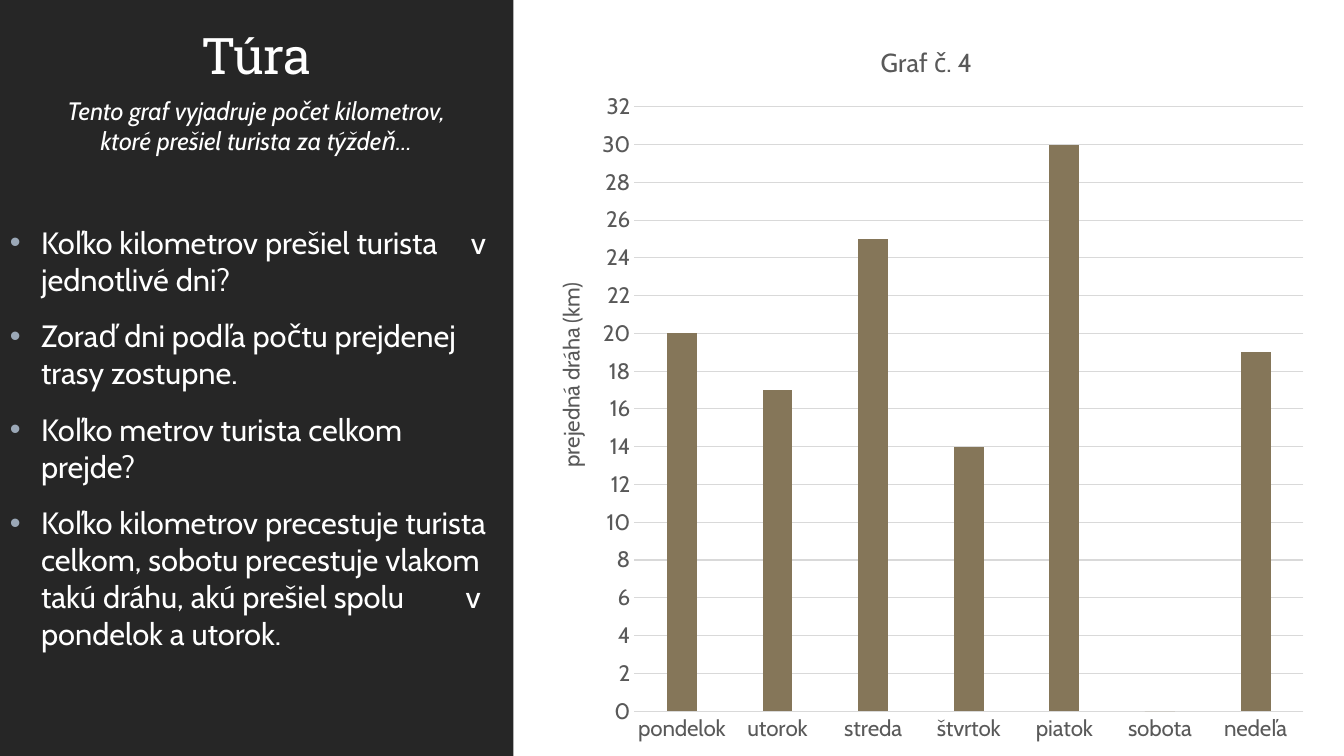
from lxml.etree import SubElement
from pptx import Presentation
from pptx.chart.data import CategoryChartData
from pptx.dml.color import RGBColor
from pptx.enum.chart import XL_CHART_TYPE, XL_TICK_MARK
from pptx.enum.shapes import MSO_SHAPE
from pptx.enum.text import MSO_ANCHOR, MSO_AUTO_SIZE, PP_ALIGN
from pptx.oxml import parse_xml
from pptx.oxml.ns import nsdecls, qn
from pptx.util import Emu, Inches, Pt

COLORS = {"panel": "262626", "white": "FFFFFF", "bullet": "9BA8B7",
          "bar": "857659", "label": "595959", "line": "D9D9D9"}
BODY_FONT, TITLE_FONT = "Cabin", "Roboto Slab"

KILOMETRES = {"pondelok": 20, "utorok": 17, "streda": 25, "štvrtok": 14,
              "piatok": 30, "sobota": 0, "nedeľa": 19}
# Each question with the tab stop, in inches, of its stand-alone "v".
QUESTIONS = [
    ("Koľko kilometrov prešiel turista\tv jednotlivé dni?", 4.7),
    ("Zoraď dni podľa počtu prejdenej trasy zostupne.", None),
    ("Koľko metrov turista celkom prejde?", None),
    ("Koľko kilometrov precestuje turista celkom, sobotu precestuje vlakom "
     "takú dráhu, akú prešiel spolu\tv pondelok a utorok.", 4.52),
]


def color(name):
    return RGBColor.from_string(COLORS[name])


def style_font(font, size, color_name, name=BODY_FONT):
    font.size, font.name, font.bold = Pt(size), name, False
    font.color.rgb = color(color_name)


def place(element, **shares):
    """Put a chart element at fixed shares of the chart's size."""
    for old in element.findall(qn("c:layout")):
        element.remove(old)
    target = '<c:layoutTarget val="inner"/>' if "w" in shares else ""
    modes = "".join(f'<c:{key}Mode val="edge"/>' for key in "xy")
    values = "".join(f'<c:{key} val="{value}"/>' for key, value in shares.items())
    layout = parse_xml(f'<c:layout {nsdecls("c")}><c:manualLayout>{target}{modes}'
                       f'{values}</c:manualLayout></c:layout>')
    text = element.find(qn("c:tx"))
    element.insert(0 if text is None else 1, layout)


class SlideBuilder:
    """Draws elements on one slide, placed by shares of its size."""

    def __init__(self, deck):
        self.deck = deck
        self.page = deck.slides.add_slide(deck.slide_layouts[6])

    def area(self, left, top, width, height):
        across, down = self.deck.slide_width, self.deck.slide_height
        return [Emu(round(share * size)) for share, size in
                zip((left, top, width, height), (across, down, across, down))]

    def panel(self, *shares):
        panel = self.page.shapes.add_shape(MSO_SHAPE.RECTANGLE, *self.area(*shares))
        panel.shadow.inherit = False
        panel.fill.solid()
        panel.fill.fore_color.rgb = color("panel")
        panel.line.fill.background()

    def text(self, shares, lines, size, font=BODY_FONT, align=PP_ALIGN.LEFT,
             anchor=MSO_ANCHOR.TOP):
        frame = self.page.shapes.add_textbox(*self.area(*shares)).text_frame
        frame.word_wrap = True
        frame.vertical_anchor = anchor
        for index, line in enumerate(lines):
            para = frame.paragraphs[0] if index == 0 else frame.add_paragraph()
            para.text = line
            para.alignment = align
            style_font(para.font, size, "white", font)
        return frame

    def bullets(self, shares, items, size):
        frame = self.text(shares, [line for line, _ in items], size)
        for para, (_, stop) in zip(frame.paragraphs, items):
            para.space_before, para.space_after = Pt(12), Pt(2)
            settings = para._p.get_or_add_pPr()
            settings.set("marL", str(Inches(0.31)))
            settings.set("indent", str(-Inches(0.31)))
            marks = [parse_xml(f'<a:buClr {nsdecls("a")}>'
                               f'<a:srgbClr val="{COLORS["bullet"]}"/></a:buClr>'),
                     parse_xml(f'<a:buFont {nsdecls("a")} typeface="Arial"/>'),
                     parse_xml(f'<a:buChar {nsdecls("a")} char="•"/>')]
            if stop:
                tabs = parse_xml(f'<a:tabLst {nsdecls("a")}/>')
                SubElement(tabs, qn("a:tab"), pos=str(Inches(stop)), algn="l")
                marks.append(tabs)
            defaults = settings.find(qn("a:defRPr"))
            for mark in marks:
                defaults.addprevious(mark)

    def chart_title(self, owner, title, size, **shares):
        frame = owner.text_frame
        frame.text = title
        style_font(frame.paragraphs[0].font, size, "label")
        place(owner._element, **shares)

    def column_chart(self, shares, values, title, axis_title):
        data = CategoryChartData()
        data.categories = list(values)
        data.add_series("Series 1", list(values.values()))
        chart = self.page.shapes.add_chart(
            XL_CHART_TYPE.COLUMN_CLUSTERED, *self.area(*shares), data).chart
        chart.has_legend = False
        style_font(chart.font, 16, "label")
        chart.has_title = True
        self.chart_title(chart.chart_title, title, 18.6, x=0.44, y=0.04)

        days, distance = chart.category_axis, chart.value_axis
        for axis in (days, distance):
            axis.major_tick_mark = axis.minor_tick_mark = XL_TICK_MARK.NONE
            style_font(axis.tick_labels.font, 16, "label")
        distance.minimum_scale, distance.maximum_scale = 0, 32
        distance.major_unit = 2
        distance.format.line.fill.background()
        for line in (days.format.line, distance.major_gridlines.format.line):
            line.color.rgb = color("line")
            line.width = Pt(0.75)
        distance.has_title = True
        self.chart_title(distance.axis_title, axis_title, 16, x=0.03, y=0.36)
        direction = distance.axis_title.text_frame._txBody.find(qn("a:bodyPr"))
        direction.set("rot", "-5400000")
        direction.set("vert", "horz")

        plot = chart.plots[0]
        plot.gap_width, plot.overlap = 219, -27
        plot.vary_by_categories = False
        bars = plot.series[0].format.fill
        bars.solid()
        bars.fore_color.rgb = color("bar")
        place(chart._chartSpace.chart.plotArea, x=0.134, y=0.13, w=0.847, h=0.81)


def main():
    deck = Presentation()
    deck.slide_width, deck.slide_height = Inches(13.33), Inches(7.5)
    slide = SlideBuilder(deck)
    slide.panel(0, 0, 0.382, 1)
    slide.column_chart((0.393, 0.013, 0.588, 0.987), KILOMETRES,
                       "Graf č. 4", "prejedná dráha (km)")
    heading = slide.text((0.0465, 0.027, 0.289, 0.092), ["Túra"], 36, TITLE_FONT,
                         PP_ALIGN.CENTER, MSO_ANCHOR.BOTTOM).paragraphs[0]
    heading.line_spacing = 0.9
    heading.runs[0].font._element.set("spc", "-50")
    intro = slide.text((0.034, 0.119, 0.3135, 0.095),
                       ["Tento graf vyjadruje počet kilometrov, "
                        "ktoré prešiel turista za týždeň..."],
                       18, align=PP_ALIGN.CENTER)
    intro.auto_size = MSO_AUTO_SIZE.SHAPE_TO_FIT_TEXT
    intro.paragraphs[0].font.italic = True
    slide.bullets((0, 0.289, 0.381, 0.679), QUESTIONS, 22)
    deck.save("out.pptx")


if __name__ == "__main__":
    main()
